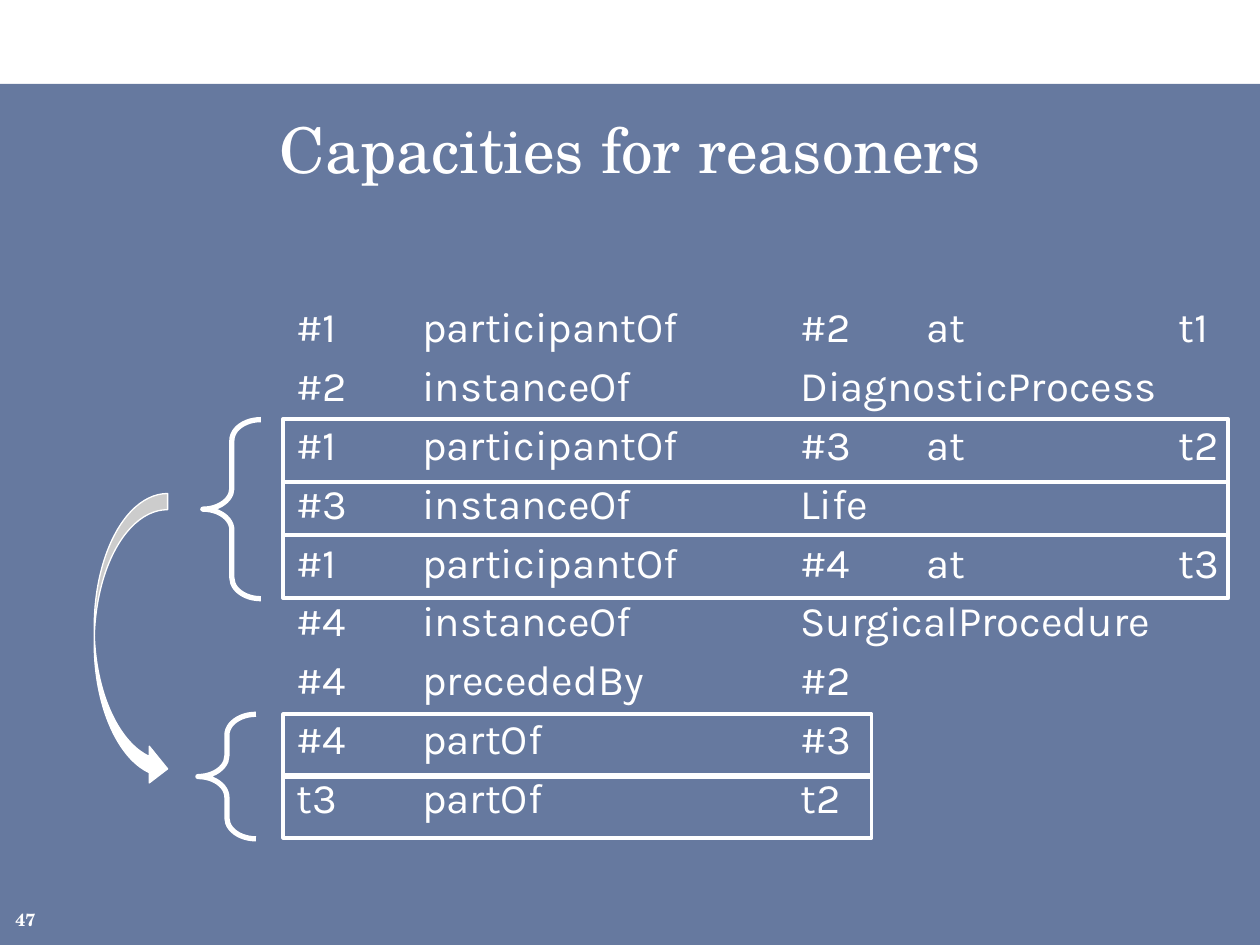
"""Build the slide on capacities for reasoners."""
from dataclasses import dataclass

from lxml.etree import SubElement
from pptx import Presentation
from pptx.dml.color import RGBColor
from pptx.enum.shapes import MSO_SHAPE
from pptx.enum.text import MSO_ANCHOR, MSO_AUTO_SIZE, PP_ALIGN
from pptx.oxml.ns import qn
from pptx.util import Cm, Pt

COLORS = {"panel": "002060", "ink": "FFFFFF"}
SERIF, SANS = "TeX Gyre Schola", "Karla"
TAB_SIZE = Cm(2.54)
STATEMENTS = (
    "#1\tparticipantOf\t#2\tat\t\tt1",
    "#2\tinstanceOf\t\tDiagnosticProcess",
    "#1\tparticipantOf\t#3\tat\t\tt2",
    "#3\tinstanceOf\t\tLife",
    "#1\tparticipantOf\t#4\tat\t\tt3",
    "#4\tinstanceOf\t\tSurgicalProcedure",
    "#4\tprecededBy\t\t#2",
    "#4\tpartOf\t\t\t#3",
    "t3\tpartOf\t\t\tt2",
)


@dataclass(frozen=True)
class Box:
    left: float
    top: float
    width: float
    height: float

    def lengths(self) -> tuple:
        return Cm(self.left), Cm(self.top), Cm(self.width), Cm(self.height)


@dataclass(frozen=True)
class Mark:
    kind: MSO_SHAPE
    box: Box
    line_width: float
    adjustments: tuple = ()
    filled: bool = False


FRAMES = (
    Box(5.71, 14.4, 11.86, 1.27),
    Box(5.71, 10.79, 19.05, 1.27),
    Box(5.71, 8.45, 19.05, 1.27),
    Box(5.71, 9.72, 19.05, 1.07),
    Box(5.71, 15.62, 11.86, 1.27),
)
MARKS = tuple(Mark(MSO_SHAPE.RECTANGLE, frame, 2.25) for frame in FRAMES) + (
    Mark(MSO_SHAPE.LEFT_BRACE, Box(4.09, 8.46, 1.17, 3.61), 3, (0.36, 0.5)),
    Mark(MSO_SHAPE.LEFT_BRACE, Box(3.99, 14.4, 1.17, 2.51), 3, (0.36, 0.5)),
    Mark(MSO_SHAPE.CURVED_RIGHT_ARROW, Box(1.9, 9.95, 1.48, 5.92), 0.75, (0.22, 0.5, 0.25), True),
)


def color(name: str) -> RGBColor:
    return RGBColor.from_string(COLORS[name])


def place(shape, box: Box) -> None:
    shape.left, shape.top, shape.width, shape.height = box.lengths()


def add_run(paragraph, text: str, font: str, size: float, bold: bool = False) -> None:
    run = paragraph.add_run()
    run.text = text
    run.font.name, run.font.size, run.font.bold = font, Pt(size), bold
    run.font.color.rgb = color("ink")


def add_panel(slide) -> None:
    panel = slide.shapes.add_shape(MSO_SHAPE.RECTANGLE, *Box(0, 1.69, 25.4, 17.36).lengths())
    panel.shadow.inherit = False
    panel.fill.solid()
    panel.fill.fore_color.rgb = color("panel")
    panel.line.fill.background()
    solid_color = panel.element.spPr.find(f"{qn('a:solidFill')}/{qn('a:srgbClr')}")
    SubElement(solid_color, qn("a:alpha"), val="60000")
    tree = slide.shapes.element
    tree.remove(panel.element)
    tree.insert(2, panel.element)


def add_page_number(slide, number: str) -> None:
    text_box = slide.shapes.add_textbox(*Box(0.06, 18.21, 0.99, 0.64).lengths())
    text_box.text_frame.word_wrap = False
    add_run(text_box.text_frame.paragraphs[0], number, SERIF, 10, bold=True)


def fill_title(title, text: str) -> None:
    place(title, Box(0.64, 2.11, 24.13, 2.11))
    title.text_frame.vertical_anchor = MSO_ANCHOR.TOP
    paragraph = title.text_frame.paragraphs[0]
    paragraph.alignment = PP_ALIGN.CENTER
    add_run(paragraph, text, SERIF, 36)


def set_columns(paragraph) -> None:
    properties = paragraph._p.get_or_add_pPr()
    properties.set("marL", "0")
    properties.set("indent", "0")
    properties.set("defTabSz", str(int(TAB_SIZE)))
    SubElement(properties, qn("a:buNone"))


def fill_statements(body) -> None:
    place(body, Box(0.64, 5.94, 24.56, 7.62))
    frame = body.text_frame
    frame.auto_size = MSO_AUTO_SIZE.NONE
    frame.vertical_anchor = MSO_ANCHOR.TOP
    for index, statement in enumerate(STATEMENTS):
        paragraph = frame.add_paragraph() if index else frame.paragraphs[0]
        set_columns(paragraph)
        paragraph.space_before = Pt(4.8 if index else 0)
        add_run(paragraph, f"\t\t{statement}", SANS, 24)


def add_mark(slide, mark: Mark) -> None:
    shape = slide.shapes.add_shape(mark.kind, *mark.box.lengths())
    shape.shadow.inherit = False
    for index, value in enumerate(mark.adjustments):
        shape.adjustments[index] = value
    if mark.filled:
        shape.fill.solid()
        shape.fill.fore_color.rgb = color("ink")
    else:
        shape.fill.background()
    shape.line.color.rgb = color("ink")
    shape.line.width = Pt(mark.line_width)


def main() -> None:
    presentation = Presentation()
    presentation.slide_width, presentation.slide_height = Cm(25.4), Cm(19.05)
    slide = presentation.slides.add_slide(presentation.slide_layouts[1])
    add_panel(slide)
    fill_title(slide.shapes.title, "Capacities for reasoners")
    fill_statements(slide.placeholders[1])
    add_page_number(slide, "47")
    for mark in MARKS:
        add_mark(slide, mark)
    presentation.save("out.pptx")


if __name__ == "__main__":
    main()
